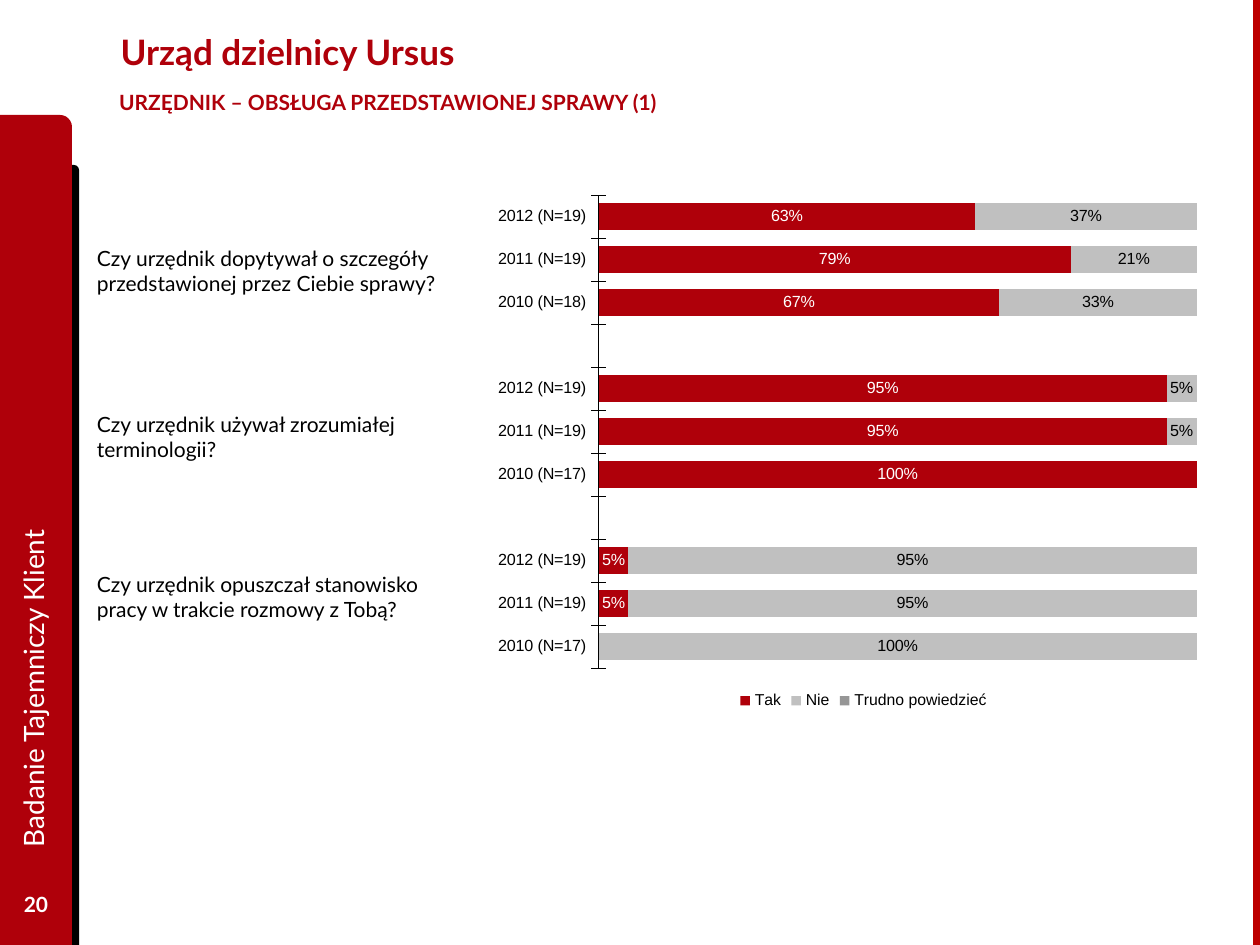
from lxml import etree
from pptx import Presentation
from pptx.chart.data import CategoryChartData
from pptx.dml.color import RGBColor
from pptx.enum.chart import XL_CHART_TYPE as ChartType, XL_LABEL_POSITION as LabelPos
from pptx.enum.chart import XL_LEGEND_POSITION as LegendPos, XL_TICK_MARK as Tick
from pptx.enum.shapes import MSO_SHAPE as Shape
from pptx.enum.text import MSO_ANCHOR as Anchor, MSO_AUTO_SIZE as AutoSize, PP_ALIGN as Align
from pptx.oxml.ns import qn
from pptx.util import Emu, Inches, Pt

RED = RGBColor(0xAF, 0x00, 0x0A)
EDGE_RED = RGBColor(0xBD, 0x00, 0x00)
BLACK = RGBColor(0, 0, 0)
WHITE = RGBColor(0xFF, 0xFF, 0xFF)
SILVER = RGBColor(0xC0, 0xC0, 0xC0)
GRAY = RGBColor(0x96, 0x96, 0x96)
PX_PER_INCH = 126


def px(*lengths):
    return [Emu(round(n * Inches(1) / PX_PER_INCH)) for n in lengths]


class SurveySlide:
    """Draws the parts of a survey slide in one shared style."""

    text_font = "Lato"
    chart_font = "Arial"

    def __init__(self, slide):
        self.slide = slide

    def style(self, font, name, size, color, bold=False):
        font.name, font.size, font.bold = name, Pt(size), bold
        font.color.rgb = color

    def fill_text(self, shape, text, size, color, bold, align, anchor):
        frame = shape.text_frame
        frame.text = text
        frame.auto_size = AutoSize.NONE
        frame.vertical_anchor = anchor
        paragraph = frame.paragraphs[0]
        paragraph.alignment = align
        self.style(paragraph.font, self.text_font, size, color, bold)
        return frame

    def panel(self, box, color, preset=Shape.ROUND_1_RECTANGLE):
        panel = self.slide.shapes.add_shape(preset, *px(*box))
        panel.shadow.inherit = False
        panel.fill.solid()
        panel.fill.fore_color.rgb = color
        panel.line.fill.background()

    def title(self, box, text):
        title = self.slide.shapes.title
        title.left, title.top, title.width, title.height = px(*box)
        self.fill_text(title, text, 20, RED, True, Align.LEFT, Anchor.MIDDLE)

    def text(self, box, text, size=12, color=BLACK, bold=False, align=Align.LEFT,
             anchor=Anchor.TOP, wrap=True, side_inset=13, rotation=0):
        textbox = self.slide.shapes.add_textbox(*px(*box))
        textbox.rotation = rotation
        frame = self.fill_text(textbox, text, size, color, bold, align, anchor)
        frame.word_wrap = wrap
        frame.margin_left, frame.margin_right = px(side_inset, side_inset)

    def stacked_bars(self, box, categories, answers, plot):
        data = CategoryChartData(number_format="0%")
        data.categories = categories
        for name, shares, _, _ in answers:
            data.add_series(name, shares)
        chart = self.slide.shapes.add_chart(ChartType.BAR_STACKED, *px(*box), data).chart
        self.style(chart.font, self.chart_font, 8, BLACK)
        chart.has_title = False

        bars = chart.plots[0]
        bars.gap_width, bars.overlap, bars.vary_by_categories = 60, 100, False
        for series, (_, _, fill, label_color) in zip(bars.series, answers):
            series.format.fill.solid()
            series.format.fill.fore_color.rgb = fill
            labels = series.data_labels
            labels.show_value = True
            labels.number_format, labels.number_format_is_linked = "0%", False
            labels.position = LabelPos.CENTER
            self.style(labels.font, self.chart_font, 9.2, label_color)

        years = chart.category_axis
        years.reverse_order = True
        years.major_tick_mark = Tick.CROSS
        years.has_major_gridlines = False
        years.format.line.color.rgb = BLACK
        years.format.line.width = Pt(0.23)
        self.style(years.tick_labels.font, self.chart_font, 9.2, BLACK)

        shares_axis = chart.value_axis
        shares_axis.minimum_scale, shares_axis.maximum_scale = 0, 1
        shares_axis.major_unit = 0.2
        shares_axis.has_major_gridlines = False
        shares_axis.visible = False

        chart.has_legend = True
        chart.legend.position = LegendPos.BOTTOM
        chart.legend.include_in_layout = False
        self.style(chart.legend.font, self.chart_font, 9, BLACK)
        self.place_plot(bars, plot)

    def place_plot(self, bars, plot):
        area = bars._element.getparent()
        for layout in area.findall(qn("c:layout")):
            area.remove(layout)
        layout = etree.Element(qn("c:layout"))
        area.insert(0, layout)
        manual = etree.SubElement(layout, qn("c:manualLayout"))
        settings = [("layoutTarget", "inner"), ("xMode", "edge"), ("yMode", "edge")]
        for tag, value in settings + list(zip("xywh", plot)):
            etree.SubElement(manual, qn(f"c:{tag}"), val=str(value))


def main():
    deck = Presentation()
    deck.slide_width, deck.slide_height = px(1260, 945)
    page = SurveySlide(deck.slides.add_slide(deck.slide_layouts[5]))

    page.panel((49, 165, 30, 780), BLACK)
    page.panel((0, 115, 72, 830), RED)
    page.panel((1253, 0, 7, 945), EDGE_RED, Shape.RECTANGLE)

    page.title((108, 6, 979, 91), "Urząd dzielnicy Ursus")
    page.text((94, 83, 485, 42), "URZĘDNIK – OBSŁUGA PRZEDSTAWIONEJ SPRAWY (1)",
              color=RED, bold=True, wrap=False, side_inset=25)

    questions = [
        (239, 407, "Czy urzędnik dopytywał o szczegóły przedstawionej przez Ciebie sprawy?"),
        (405, 407, "Czy urzędnik używał zrozumiałej terminologii?"),
        (565, 369, "Czy urzędnik opuszczał stanowisko pracy w trakcie rozmowy z Tobą?"),
    ]
    for top, width, question in questions:
        page.text((84, top, width, 63), question)

    categories = [
        "2012 (N=19)", "2011 (N=19)", "2010 (N=18)", "",
        "2012 (N=19)", "2011 (N=19)", "2010 (N=17)", "",
        "2012 (N=19)", "2011 (N=19)", "2010 (N=17)",
    ]
    yes = [0.63, 0.79, 0.67, None, 0.95, 0.95, 1, None, 0.05, 0.05, None]
    no = [0.37, 0.21, 0.33, None, 0.05, 0.05, None, None, 0.95, 0.95, 1]
    answers = [
        ("Tak", yes, RED, WHITE),
        ("Nie", no, SILVER, BLACK),
        ("Trudno powiedzieć", [None] * len(categories), GRAY, BLACK),
    ]
    page.stacked_bars((485, 195, 757, 520), categories, answers, (0.15, 0, 0.79, 0.91))

    page.text((0, 879, 72, 50), "20", color=WHITE, bold=True,
              align=Align.CENTER, anchor=Anchor.MIDDLE)
    page.text((-330, 465, 726, 64), "Badanie Tajemniczy Klient", size=16, color=WHITE,
              anchor=Anchor.MIDDLE, rotation=270)

    deck.save("out.pptx")


if __name__ == "__main__":
    main()
